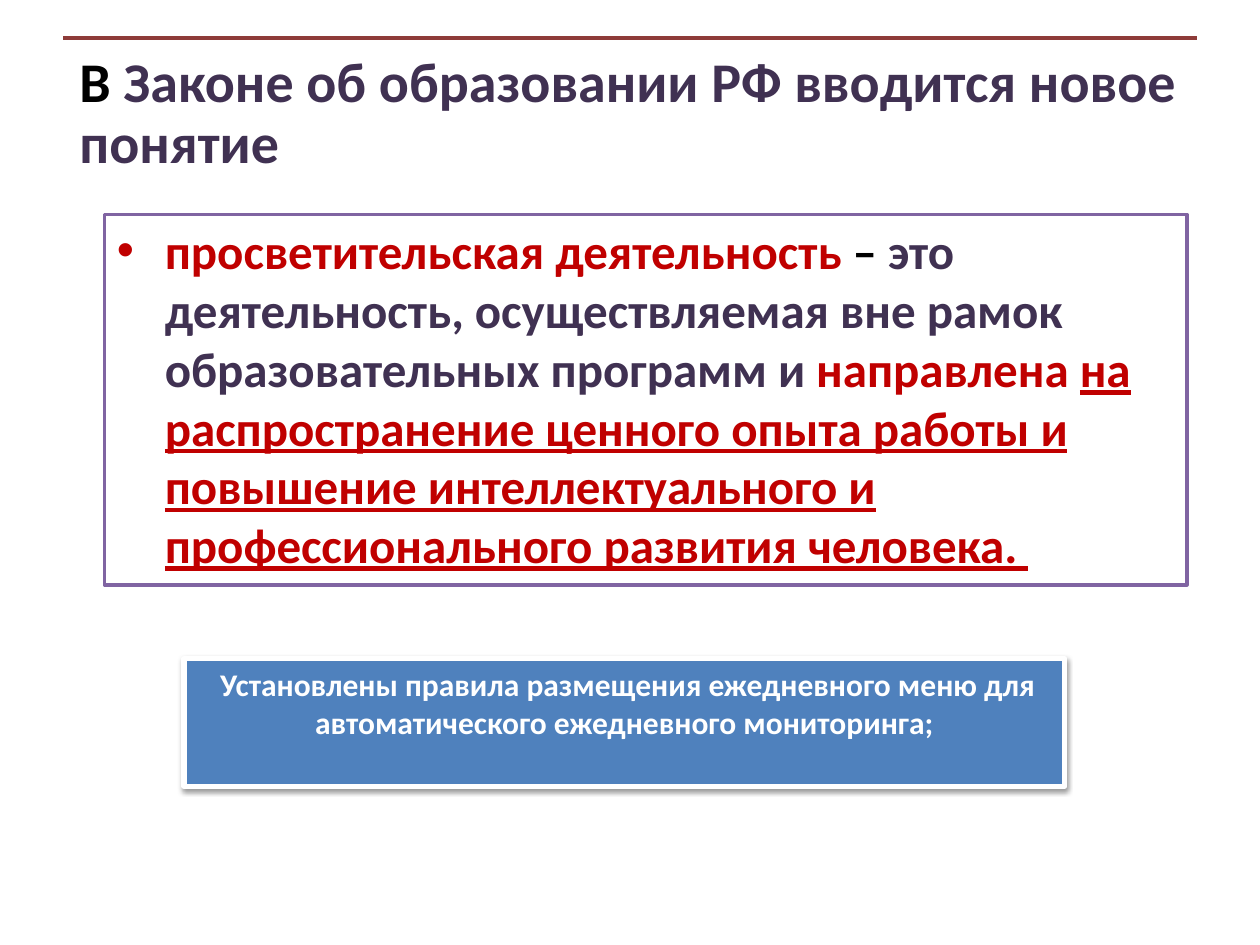
import pptx
import pptx.util
import pptx.dml.color
import pptx.enum.shapes
import pptx.enum.text
import pptx.oxml
import pptx.oxml.ns
import lxml.etree

Pt, Inches = pptx.util.Pt, pptx.util.Inches
RGB = pptx.dml.color.RGBColor
Align = pptx.enum.text.PP_ALIGN
Kind = pptx.enum.shapes.MSO_SHAPE
qn = pptx.oxml.ns.qn

BLACK = RGB(0x00, 0x00, 0x00)
WHITE = RGB(0xFF, 0xFF, 0xFF)
PLUM = RGB(0x40, 0x31, 0x52)
RED = RGB(0xC0, 0x00, 0x00)
BRICK = RGB(0x8E, 0x3B, 0x39)
VIOLET = RGB(0x80, 0x64, 0xA2)
BLUE = RGB(0x4F, 0x81, 0xBD)

WIDE, HIGH = Inches(10), Inches(7.5)


def share(x, y, w, h):
    """Turn shares of the slide into a box of lengths."""
    return int(x * WIDE), int(y * HIGH), int(w * WIDE), int(h * HIGH)


def add_runs(para, size, runs):
    for text, color, bold, under in runs:
        run = para.add_run()
        run.text = text
        font = run.font
        font.name, font.size = "Calibri", Pt(size)
        font.bold, font.underline = bold, under
        font.color.rgb = color


def set_frame(frame, inset=None):
    frame.word_wrap = True
    frame.auto_size = pptx.enum.text.MSO_AUTO_SIZE.NONE
    frame.vertical_anchor = pptx.enum.text.MSO_ANCHOR.TOP
    if inset is not None:
        frame.margin_left = frame.margin_right = inset
        frame.margin_top = frame.margin_bottom = inset


def add_panel(slide, box, fill, line, width):
    panel = slide.shapes.add_shape(Kind.RECTANGLE, *box)
    panel.shadow.inherit = False
    panel.fill.solid()
    panel.fill.fore_color.rgb = fill
    panel.line.color.rgb = line
    panel.line.width = Pt(width)
    set_frame(panel.text_frame)
    return panel


def add_head(slide, box):
    """Rule along the top edge with the title under it."""
    left, top, width, height = box
    rule = slide.shapes.add_connector(
        pptx.enum.shapes.MSO_CONNECTOR.STRAIGHT, left, top, left + width, top)
    rule.line.color.rgb = BRICK
    rule.line.width = Pt(2)
    lxml.etree.SubElement(rule._element.spPr, qn("a:effectLst"))

    title = slide.shapes.title
    title.left, title.top, title.width, title.height = box
    set_frame(title.text_frame, Inches(0.13))
    para = title.text_frame.paragraphs[0]
    para.alignment = Align.LEFT
    para.line_spacing = 0.9
    add_runs(para, 32, [
        ("В", BLACK, True, False),
        (" Законе об образовании РФ вводится новое понятие", PLUM, True, False),
    ])


def add_term(slide, box):
    """Framed definition with a hanging bullet."""
    panel = add_panel(slide, box, WHITE, VIOLET, 2)
    para = panel.text_frame.paragraphs[0]
    para.alignment = Align.LEFT
    para.space_before = Pt(5.6)
    props = para._p.get_or_add_pPr()
    hang = Inches(0.38)
    props.set("marL", str(hang))
    props.set("indent", str(-hang))
    lxml.etree.SubElement(props, qn("a:buFont")).set("typeface", "Arial")
    lxml.etree.SubElement(props, qn("a:buChar")).set("char", "•")
    add_runs(para, 28, [
        ("просветительская деятельность ", RED, True, False),
        ("– ", BLACK, True, False),
        ("это деятельность, осуществляемая вне рамок образовательных "
         "программ и ", PLUM, True, False),
        ("направлена ", RED, True, False),
        ("на распространение ценного опыта работы и повышение "
         "интеллектуального и профессионального развития человека.",
         RED, True, True),
        (" ", RED, False, True),
    ])


def add_note(slide, box):
    """Blue note with a soft shadow below it."""
    panel = add_panel(slide, box, BLUE, WHITE, 3)
    effects = panel._element.spPr.find(qn("a:effectLst"))
    shade = lxml.etree.SubElement(effects, qn("a:outerShdw"))
    for key, value in (("blurRad", Pt(3.1)), ("dist", Pt(1.6)),
                       ("dir", 90 * 60000), ("rotWithShape", 0)):
        shade.set(key, str(int(value)))
    tint = lxml.etree.SubElement(shade, qn("a:srgbClr"))
    tint.set("val", str(BLACK))
    lxml.etree.SubElement(tint, qn("a:alpha")).set("val", "38000")

    para = panel.text_frame.paragraphs[0]
    para.alignment = Align.CENTER
    add_runs(para, 18, [
        (" ", WHITE, False, False),
        ("Установлены правила размещения ежедневного меню для "
         "автоматического ежедневного мониторинга;", WHITE, True, False),
    ])


def main():
    deck = pptx.Presentation()
    deck.slide_width, deck.slide_height = WIDE, HIGH
    slide = deck.slides.add_slide(deck.slide_layouts.get_by_name("Title Only"))
    add_head(slide, share(0.05, 0.04, 0.9, 1 / 6))
    add_term(slide, share(0.083, 0.227, 0.859, 0.392))
    add_note(slide, share(0.146, 0.697, 0.699, 0.135))
    deck.save("out.pptx")


if __name__ == "__main__":
    main()
